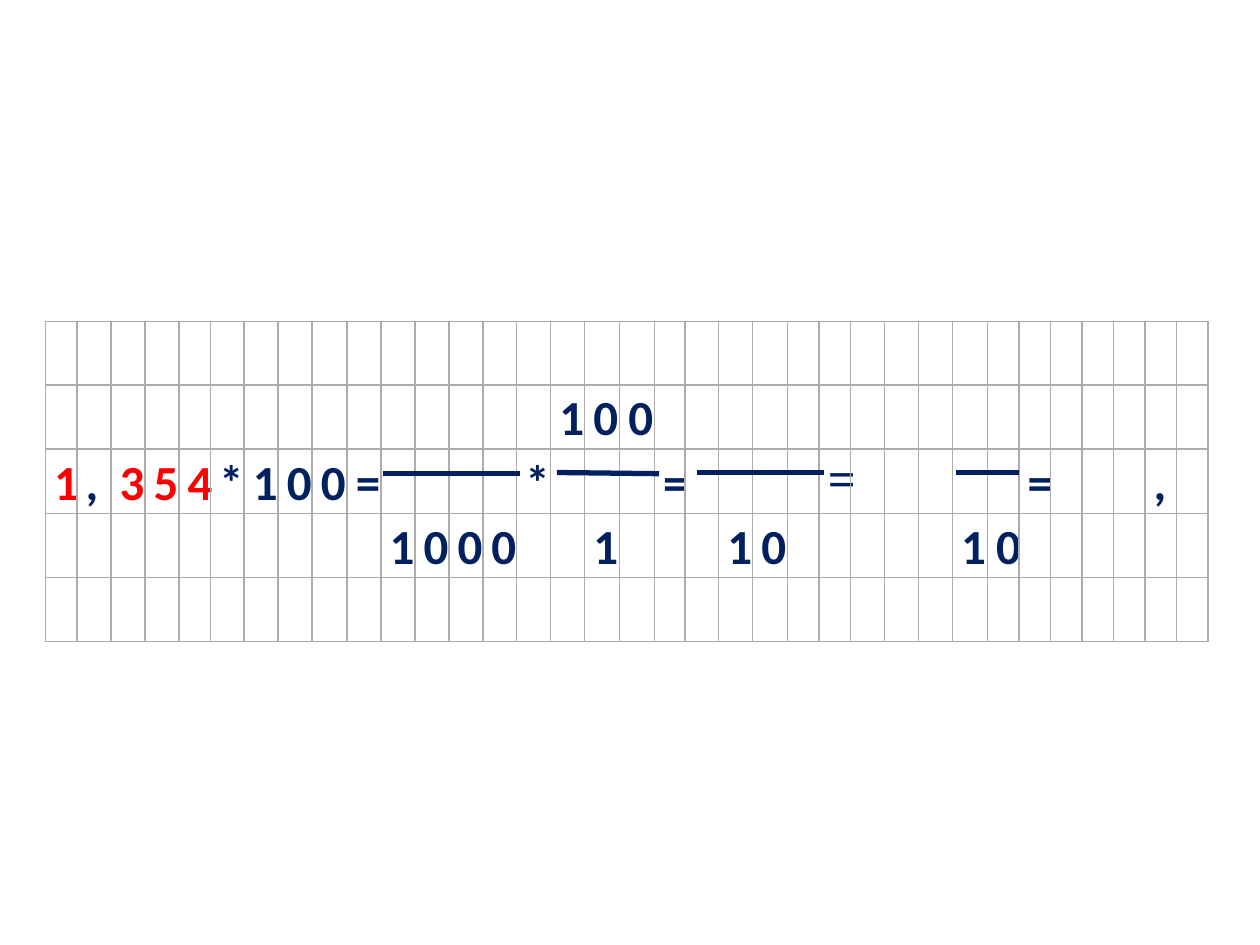
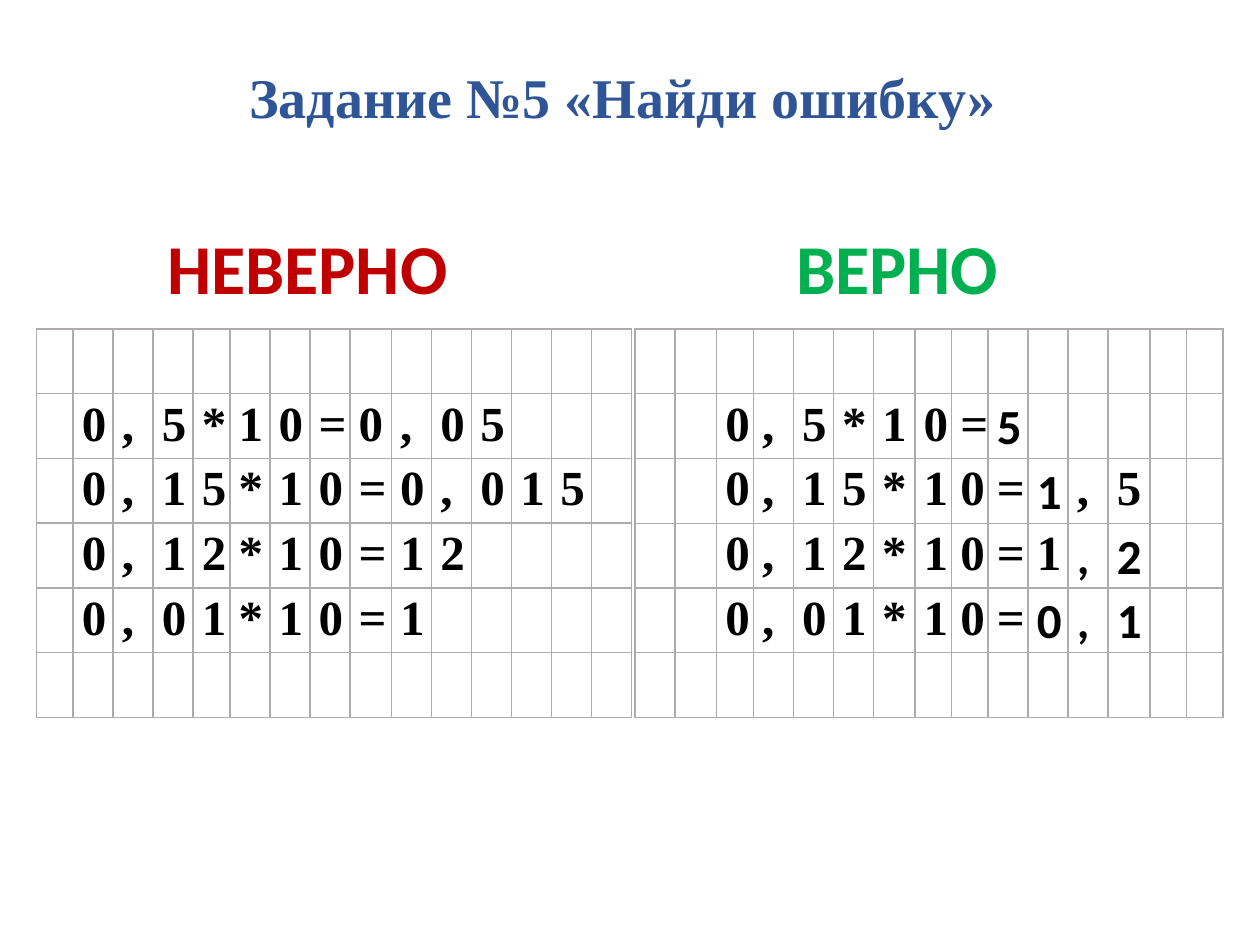
import pptx
import pptx.util
import pptx.dml.color
import pptx.enum.shapes
import pptx.enum.text
import pptx.oxml
import lxml.etree
from dataclasses import dataclass

Pt = pptx.util.Pt
RGB = pptx.dml.color.RGBColor.from_string
A = "http://schemas.openxmlformats.org/drawingml/2006/main"


@dataclass(frozen=True)
class Theme:
    sans: str = "Calibri"
    serif: str = "Times New Roman"
    navy: str = "002060"
    red: str = "FF0000"
    black: str = "000000"
    grid: str = "AFABAB"
    title: str = "2F5597"
    wrong: str = "C00000"
    correct: str = "00B050"
    digit_size: int = 28
    title_size: int = 32
    verdict_size: int = 40


theme = Theme()


def style(font, name, size, color):
    font.name = name
    font.size = Pt(size)
    font.bold = True
    font.color.rgb = RGB(color)


def add_squared_paper(slide, left, top, widths, row_count, row_height, entries):
    frame = slide.shapes.add_table(row_count, len(widths), Pt(left), Pt(top),
                                   Pt(sum(widths)), Pt(row_count * row_height))
    paper = frame.table
    paper.first_row = False
    paper.horz_banding = False
    for column, width in zip(paper.columns, widths):
        column.width = Pt(width)
    for row in paper.rows:
        row.height = Pt(row_height)
    symbols = {(row, start + i): (symbol, name, color)
               for row, start, text, name, color in entries
               for i, symbol in enumerate(text)}
    for row in range(row_count):
        for col in range(len(widths)):
            cell = paper.cell(row, col)
            cell.margin_left = cell.margin_right = Pt(5)
            cell.margin_top = cell.margin_bottom = 0
            cell_properties = cell._tc.get_or_add_tcPr()
            for side in ("lnL", "lnR", "lnT", "lnB"):
                cell_properties.append(pptx.oxml.parse_xml(
                    f'<a:{side} xmlns:a="{A}" w="{Pt(1)}"><a:solidFill>'
                    f'<a:srgbClr val="{theme.grid}"/></a:solidFill></a:{side}>'))
            cell.fill.background()
            symbol, name, color = symbols.get((row, col), ("", theme.sans, theme.black))
            paragraph = cell.text_frame.paragraphs[0]
            paragraph.text = symbol
            paragraph.alignment = pptx.enum.text.PP_ALIGN.JUSTIFY
            paragraph.line_spacing = 1.07
            style(paragraph.font, name, theme.digit_size, color)


deck = pptx.Presentation()
deck.slide_width = Pt(720)
deck.slide_height = Pt(540)
blank = deck.slide_layouts[6]

fractions = deck.slides.add_slide(blank)
square_widths = {"t": 17.3, "n": 18, "m": 19.4, "w": 20}
square_pattern = "nmmmnmmmwmmmmmmmwwtmmwnnmmmwnnnnnnn"
fraction_entries = [
    (1, 15, "100", theme.sans, theme.navy),
    (2, 0, "1,354", theme.sans, theme.red),
    (2, 1, ",", theme.sans, theme.navy),
    (2, 5, "*100=", theme.sans, theme.navy),
    (2, 14, "*", theme.sans, theme.navy),
    (2, 18, "=", theme.sans, theme.navy),
    (2, 23, "=", theme.serif, theme.navy),
    (2, 29, "=", theme.sans, theme.navy),
    (2, 33, ",", theme.sans, theme.navy),
    (3, 10, "1000", theme.sans, theme.navy),
    (3, 16, "1", theme.sans, theme.navy),
    (3, 20, "10", theme.sans, theme.navy),
    (3, 27, "10", theme.sans, theme.navy),
]
add_squared_paper(fractions, 26, 183.6, [square_widths[key] for key in square_pattern],
                  5, 36.5, fraction_entries)

fraction_bars = [
    (219, 270.7, 297.4, 270.7),
    (398.2, 270, 471, 270),
    (546.5, 270, 582.5, 270),
    (318.2, 270, 376.6, 270.7),
]
for x1, y1, x2, y2 in fraction_bars:
    bar = fractions.shapes.add_connector(
        pptx.enum.shapes.MSO_CONNECTOR.STRAIGHT, Pt(x1), Pt(y1), Pt(x2), Pt(y2))
    bar.line.color.rgb = RGB(theme.navy)
    bar.line.width = Pt(3)
    lxml.etree.SubElement(bar._element.spPr, f"{{{A}}}effectLst")

mistakes = deck.slides.add_slide(blank)
paper_top, row_height = 188, 37
cell_widths = {"n": 20.9, "m": 22.9, "w": 23.8}
wrong_answers = ["0,5*10=0,05", "0,15*10=0,015", "0,12*10=12", "0,01*10=1"]
add_squared_paper(mistakes, 20.9, paper_top,
                  [cell_widths[key] for key in "nmmmnmmmwmmmmmm"], 6, row_height,
                  [(row, 1, text, theme.serif, theme.black)
                   for row, text in enumerate(wrong_answers, 1)])

verdicts = mistakes.shapes.add_textbox(Pt(10), Pt(122.4), Pt(705.6), Pt(65.5)).text_frame
verdicts.word_wrap = True
verdicts.vertical_anchor = pptx.enum.text.MSO_ANCHOR.MIDDLE
verdict_line = verdicts.paragraphs[0]
verdict_line.line_spacing = 0.9
tab_list = lxml.etree.SubElement(verdict_line._p.get_or_add_pPr(), f"{{{A}}}tabLst")
for position in (78.5, 438):
    lxml.etree.SubElement(tab_list, f"{{{A}}}tab", pos=str(Pt(position)), algn="l")
for verdict, color in (("НЕВЕРНО", theme.wrong), ("ВЕРНО", theme.correct)):
    run = verdict_line.add_run()
    run.text = "\t" + verdict
    style(run.font, theme.sans, theme.verdict_size, color)

title = mistakes.shapes.add_textbox(Pt(99.4), Pt(29.5), Pt(481.7), Pt(46.8)).text_frame
title.word_wrap = False
title.auto_size = pptx.enum.text.MSO_AUTO_SIZE.SHAPE_TO_FIT_TEXT
title_line = title.paragraphs[0]
title_line.text = "Задание №5 «Найди ошибку»"
title_line.line_spacing = 1.07
title_line.space_after = Pt(3)
title_line._p.get_or_add_pPr().set("marL", str(Pt(36)))
style(title_line.font, theme.serif, theme.title_size, theme.title)

correct_papers = [
    (0, 2, 1, [("0,5*10=", theme.serif), ("5", theme.sans)]),
    (2, 1, 0, [("0,15*10=", theme.serif), ("1", theme.sans), (",5", theme.serif)]),
    (3, 1, 0, [("0,12*10=1", theme.serif), (",2", theme.sans)]),
    (4, 2, 0, [("0,01*10=", theme.serif), ("0,1", theme.sans)]),
]
for first_row, row_count, text_row, parts in correct_papers:
    entries = []
    start = 2
    for text, name in parts:
        entries.append((text_row, start, text, name, theme.black))
        start += len(text)
    add_squared_paper(mistakes, 362.9, paper_top + first_row * row_height,
                      [cell_widths[key] for key in "mwnmmmwnnmmmwnn"],
                      row_count, row_height, entries)

deck.save("out.pptx")
